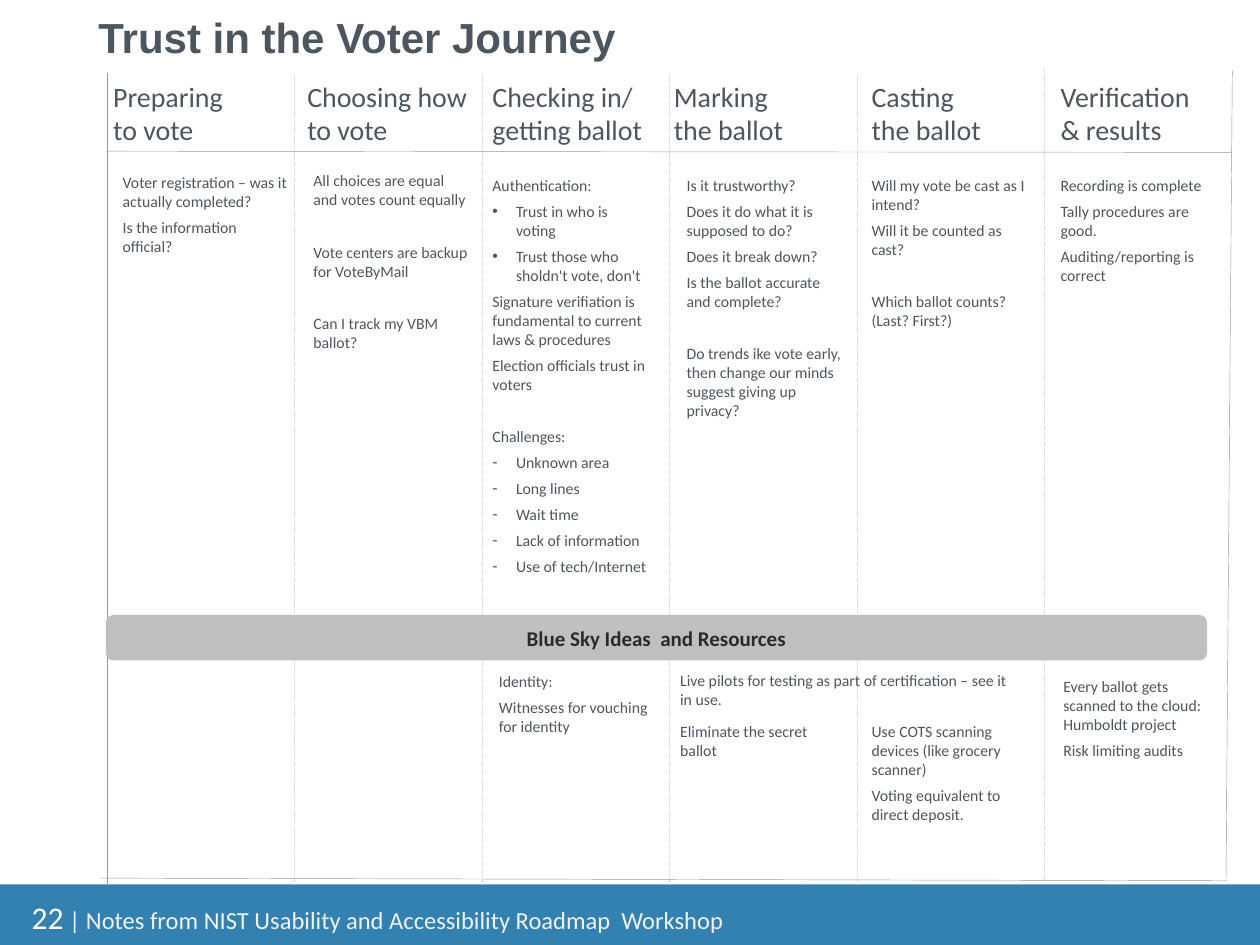
from dataclasses import dataclass

from lxml.etree import SubElement
from pptx import Presentation
from pptx.dml.color import RGBColor
from pptx.enum.dml import MSO_LINE
from pptx.enum.shapes import MSO_CONNECTOR as LINK, MSO_SHAPE as SHAPE
from pptx.enum.text import MSO_ANCHOR as ANCHOR, MSO_AUTO_SIZE as FIT, PP_ALIGN as ALIGN
from pptx.oxml.ns import qn
from pptx.util import Pt

HUES = {"text": "4D565E", "dark": "262B2F", "blue": "3281B0", "white": "FFFFFF",
        "pale": "F2F2F2", "band": "BFBFBF", "dash": "DADDE0", "rule": "8F9AA3"}


@dataclass
class Para:
    text: str
    mark: str = ""
    gap: bool = False  # leaves one line free above


class Deck:
    font = "Calibri"
    note_size = 9
    head_size = 16
    after = 4
    indent = 13.5

    def __init__(self, wide, high):
        self.prs = Presentation()
        self.prs.slide_width, self.prs.slide_height = Pt(wide), Pt(high)
        self.slide = None

    def hue(self, name):
        return RGBColor.from_string(HUES[name])

    def run(self, para, text, size, hue="text", bold=False, font=None):
        run = para.add_run()
        run.text = text
        run.font.name = font or self.font
        run.font.size = Pt(size)
        run.font.bold = bold
        run.font.color.rgb = self.hue(hue)

    def start(self, title, box):
        """Add a slide with its title."""
        self.slide = self.prs.slides.add_slide(self.prs.slide_layouts[5])
        shape = self.slide.shapes.title
        shape.left, shape.top, shape.width, shape.height = map(Pt, box)
        frame = shape.text_frame
        frame.vertical_anchor = ANCHOR.BOTTOM
        para = frame.paragraphs[0]
        para.alignment = ALIGN.LEFT
        self.run(para, title, 24, bold=True, font="Arial")

    def shape(self, kind, box, fill):
        shape = self.slide.shapes.add_shape(kind, *map(Pt, box))
        shape.shadow.inherit = False
        shape.fill.solid()
        shape.fill.fore_color.rgb = self.hue(fill)
        shape.line.fill.background()
        return shape

    def band(self, box, text):
        shape = self.shape(SHAPE.ROUNDED_RECTANGLE, box, "band")
        frame = shape.text_frame
        frame.vertical_anchor = ANCHOR.MIDDLE
        para = frame.paragraphs[0]
        para.alignment = ALIGN.CENTER
        self.run(para, text, 12, "dark", bold=True)

    def line(self, ends, hue, dashed=False):
        line = self.slide.shapes.add_connector(LINK.STRAIGHT, *map(Pt, ends))
        line.line.color.rgb = self.hue(hue)
        line.line.width = Pt(0.25)
        if dashed:
            line.line.dash_style = MSO_LINE.SQUARE_DOT
        SubElement(line._element.spPr, qn("a:effectLst"))

    def frame(self, box):
        frame = self.slide.shapes.add_textbox(*map(Pt, box)).text_frame
        frame.word_wrap = True
        frame.auto_size = FIT.SHAPE_TO_FIT_TEXT
        return frame

    def paras(self, frame, items):
        """Yield a paragraph for each item, the first one being there already."""
        for i, item in enumerate(items):
            yield (frame.add_paragraph() if i else frame.paragraphs[0]), item

    def head(self, box, *paras):
        for para, text in self.paras(self.frame(box), paras):
            for i, part in enumerate(text.split("\n")):
                if i:
                    para.add_line_break()
                self.run(para, part, self.head_size)

    def note(self, box, *items):
        for para, item in self.paras(self.frame(box), items):
            para.space_after = Pt(self.after)
            if item.gap:
                para.space_before = Pt(15)
            if item.mark:
                props = para._p.get_or_add_pPr()
                props.set("marL", str(Pt(self.indent)))
                props.set("indent", str(-Pt(self.indent)))
                SubElement(props, qn("a:buFont"), typeface="Arial")
                SubElement(props, qn("a:buChar"), char=item.mark)
            self.run(para, item.text, self.note_size)

    def foot(self, number, text):
        self.shape(SHAPE.RECTANGLE, (0, 505.4, 720, 36), "blue")
        para = self.frame((11, 509.8, 469, 29)).paragraphs[0]
        self.run(para, number, 18, "white")
        self.run(para, text, 14, "pale")


HEADS = [
    (57.6, 120, ["Preparing \nto vote"]),
    (168.5, 120, ["Choosing how to vote"]),
    (274.3, 120, ["Checking in/", "getting ballot"]),
    (378, 95, ["Marking \nthe ballot"]),
    (491, 120, ["Casting \nthe ballot"]),
    (599, 120, ["Verification \n& results"]),
]

NOTES = [
    ((63, 95, 109, 85), [
        Para("Voter registration – was it actually completed?"),
        Para("Is the information official?")]),
    ((172, 94.3, 104, 125), [
        Para("All choices are equal and votes count equally"),
        Para("Vote centers are backup for VoteByMail", gap=True),
        Para("Can I track my VBM ballot?", gap=True)]),
    ((274.3, 97, 102.5, 312), [
        Para("Authentication:"),
        Para("Trust in who is voting", "•"),
        Para("Trust those who sholdn't vote, don't", "•"),
        Para("Signature verifiation is fundamental to current laws & procedures"),
        Para("Election officials trust in voters"),
        Para("Challenges:", gap=True),
        Para("Unknown area", "-"),
        Para("Long lines", "-"),
        Para("Wait time", "-"),
        Para("Lack of information", "-"),
        Para("Use of tech/Internet", "-")]),
    ((385.3, 97, 102.5, 192), [
        Para("Is it trustworthy?"),
        Para("Does it do what it is supposed to do?"),
        Para("Does it break down?"),
        Para("Is the ballot accurate and complete?"),
        Para("Do trends ike vote early, then change our minds suggest giving up privacy?",
             gap=True)]),
    ((491, 97, 102.5, 140), [
        Para("Will my vote be cast as I intend?"),
        Para("Will it be counted as cast?"),
        Para("Which ballot counts? (Last? First?)", gap=True)]),
    ((599, 97, 102.5, 114), [
        Para("Recording is complete"),
        Para("Tally procedures are good."),
        Para("Auditing/reporting is correct")]),
]

IDEAS = [
    ((278, 380.3, 101.5, 44), [
        Para("Identity:"),
        Para("Witnesses for vouching for identity")]),
    ((381.6, 379.5, 207.5, 44), [
        Para("Live pilots for testing as part of certification – see it in use.")]),
    ((381.6, 409, 101.5, 44), [
        Para("Eliminate the secret ballot")]),
    ((491, 409, 109, 81), [
        Para("Use COTS scanning devices (like grocery scanner)"),
        Para("Voting equivalent to direct deposit.")]),
    ((600.5, 383, 104, 55), [
        Para("Every ballot gets scanned to the cloud: Humboldt project"),
        Para("Risk limiting audits")]),
]

EDGES = [(704.2, 40.3, 700.6, 501.8), (57.6, 501.8, 701.3, 503.3),
         (60.5, 86.4, 703.4, 87.1)]


def main():
    deck = Deck(720, 540)
    deck.start("Trust in the Voter Journey", (49, 2.2, 648, 36.7))
    deck.foot("22", " | Notes from NIST Usability and Accessibility Roadmap  Workshop")
    deck.shape(SHAPE.RECTANGLE, (61.2, 40.3, 643.7, 46), "white")

    left, step = 61.2, 107.15
    for col in range(6):
        x = left + col * step
        rise = 2.2 if col == 5 else 0
        deck.line((x, 41.8 - rise, x, 505.4 - rise), "dash" if col else "rule", col > 0)
    for edge in EDGES:
        deck.line(edge, "rule")

    for x, wide, paras in HEADS:
        deck.head((x, 41.8, wide, 46), *paras)
    deck.band((60.5, 351.4, 629.3, 26), "Blue Sky Ideas  and Resources")
    for box, items in NOTES + IDEAS:
        deck.note(box, *items)
    deck.prs.save("out.pptx")


if __name__ == "__main__":
    main()
